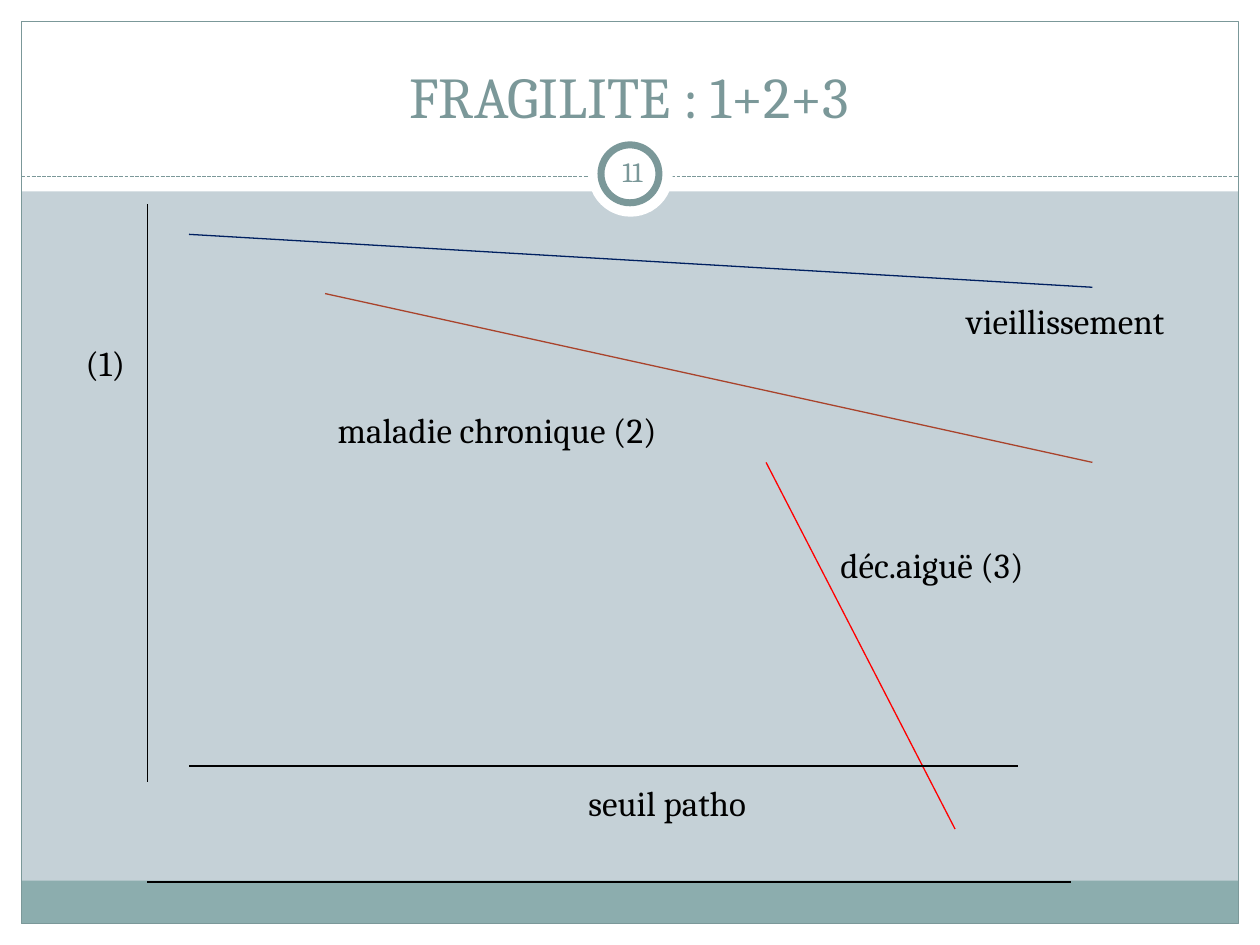
from lxml import etree
from pptx import Presentation
from pptx.dml.color import RGBColor
from pptx.enum.dml import MSO_LINE
from pptx.enum.shapes import MSO_CONNECTOR, MSO_SHAPE
from pptx.enum.text import MSO_ANCHOR, MSO_AUTO_SIZE, PP_ALIGN
from pptx.oxml.ns import qn
from pptx.util import Inches, Pt

RECT, OVAL = MSO_SHAPE.RECTANGLE, MSO_SHAPE.OVAL
STRAIGHT, DASH = MSO_CONNECTOR.STRAIGHT, MSO_LINE.SQUARE_DOT
LEFT, CENTER = PP_ALIGN.LEFT, PP_ALIGN.CENTER
MIDDLE, BOTTOM = MSO_ANCHOR.MIDDLE, MSO_ANCHOR.BOTTOM
WHITE = RGBColor(0xFF, 0xFF, 0xFF)
BLACK = RGBColor(0x00, 0x00, 0x00)
GREY_BLUE = RGBColor(0xC5, 0xD1, 0xD7)
TEAL = RGBColor(0x7B, 0x98, 0x99)
BAND = RGBColor(0x8C, 0xAD, 0xAE)
NAVY = RGBColor(0x00, 0x20, 0x60)
RUST = RGBColor(0xA9, 0x43, 0x2B)
RED = RGBColor(0xFF, 0x00, 0x00)

FONT = "Cambria"
W, H, EDGE = 10, 7.5, 0.17
LABEL_H, INSET = 0.4, 0.05

TITLE = "FRAGILITE : 1+2+3"
NUMBER = "11"
FRAME = [
    (RECT, (0, H - EDGE, W, EDGE), WHITE, None, 0),
    (RECT, (0, 0, W, 1.52), WHITE, None, 0),
    (RECT, (0, 0, EDGE, H), WHITE, None, 0),
    (RECT, (W - EDGE, 0, EDGE, H), WHITE, None, 0),
    (RECT, (EDGE, 6.99, W - 2 * EDGE, 0.34), BAND, None, 0),
    (RECT, (EDGE, EDGE, W - 2 * EDGE, H - 2 * EDGE), None, TEAL, 0.75),
]
BADGE = [
    (OVAL, (4.67, 1.05, 0.67, 0.67), WHITE, None, 0),
    (OVAL, (4.77, 1.15, 0.46, 0.46), WHITE, TEAL, 4),
]
CURVES = [
    ((1.17, 1.62), (1.17, 6.21), BLACK),
    ((1.17, 7), (8.5, 7), BLACK),
    ((1.5, 1.86), (8.67, 2.28), NAVY),
    ((2.58, 2.33), (8.67, 3.67), RUST),
    ((6.08, 3.67), (7.58, 6.58), RED),
    ((1.5, 6.08), (8.08, 6.08), BLACK),
]
LABELS = [
    ("vieillissement", 7.67, 2.54, 1.75),
    ("(1)", 0.68, 2.88, 0.45),
    ("maladie chronique (2)", 2.68, 3.41, 2.75),
    ("déc.aiguë (3)", 6.67, 4.48, 1.75),
    ("seuil patho", 4.67, 6.37, 1.5),
]


def add_shapes(items):
    for kind, box, fill, line, width in items:
        sp = s.shapes.add_shape(kind, *map(Inches, box))
        sp.shadow.inherit = False
        if fill is None:
            sp.fill.background()
        else:
            sp.fill.solid()
            sp.fill.fore_color.rgb = fill
        if line is None:
            sp.line.fill.background()
        else:
            sp.line.color.rgb = line
            sp.line.width = Pt(width)


def add_line(start, end, color, dash=None):
    ln = s.shapes.add_connector(STRAIGHT, *map(Inches, start + end))
    ln.line.color.rgb = color
    ln.line.width = Pt(0.75)
    if dash is not None:
        ln.line.dash_style = dash
    etree.SubElement(ln.element.spPr, qn("a:effectLst"))


def put_text(sp, text, size=20, color=BLACK, align=LEFT, anchor=MIDDLE, wrap=True):
    tf = sp.text_frame
    tf.auto_size = MSO_AUTO_SIZE.NONE
    tf.word_wrap = wrap
    tf.vertical_anchor = anchor
    tf.margin_left = tf.margin_right = tf.margin_top = tf.margin_bottom = Inches(INSET)
    p = tf.paragraphs[0]
    p.alignment = align
    r = p.add_run()
    r.text = text
    r.font.name = FONT
    r.font.size = Pt(size)
    r.font.color.rgb = color


prs = Presentation()
prs.slide_width, prs.slide_height = Inches(W), Inches(H)
s = prs.slides.add_slide(prs.slide_layouts[5])
s.background.fill.solid()
s.background.fill.fore_color.rgb = GREY_BLUE

add_shapes(FRAME)
add_line((EDGE, 1.4), (W - EDGE, 1.4), TEAL, DASH)
add_shapes(BADGE)

title = s.shapes.title
title.left, title.top, title.width, title.height = map(Inches, (0.33, 0.25, 9.33, 0.83))
put_text(title, TITLE, size=33, color=TEAL, align=CENTER, anchor=BOTTOM)
title.element.getparent().append(title.element)

for start, end, color in CURVES:
    add_line(start, end, color)
for text, x, mid, width in LABELS:
    box = (x - INSET, mid - LABEL_H / 2, width, LABEL_H)
    put_text(s.shapes.add_textbox(*map(Inches, box)), text)

number = s.shapes.add_textbox(*map(Inches, (4.87, 1.18, 0.3, 0.36)))
put_text(number, NUMBER, size=16, color=TEAL, align=CENTER, wrap=False)

prs.save("out.pptx")
